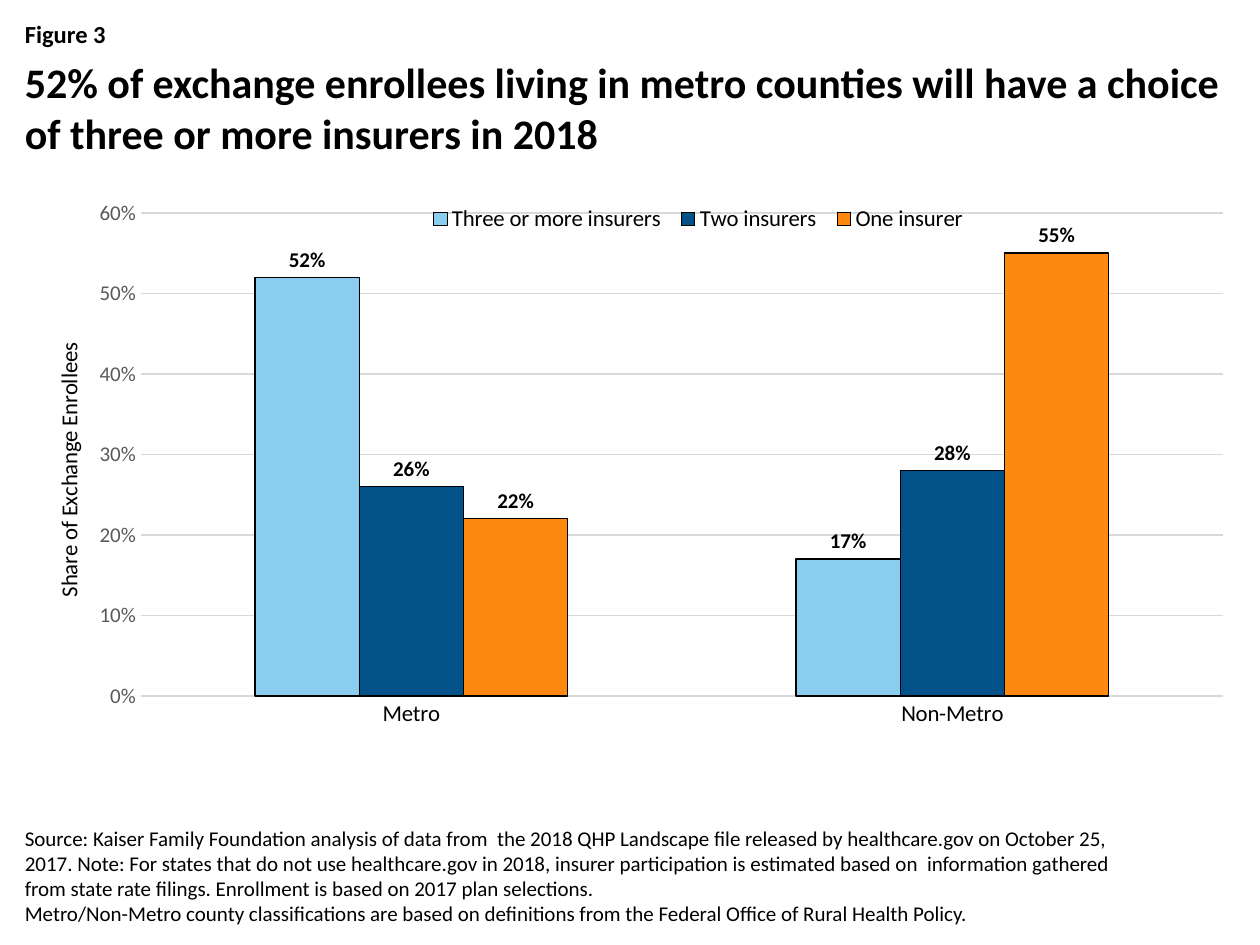
"""Build a slide with a clustered column chart of insurer choice by county type."""
from dataclasses import dataclass

from lxml import etree
from pptx import Presentation
from pptx import util as u
from pptx.chart.data import CategoryChartData
from pptx.dml.color import RGBColor
from pptx.enum import chart as ch, text
from pptx.oxml.ns import qn

FONT = "Calibri"
BLACK, GREY, GRID = "000000", "595959", "D9D9D9"


@dataclass
class Series:
    name: str
    values: tuple[float, ...]
    color: str


@dataclass
class Box:
    left: float
    top: float
    width: float
    height: float
    size: float
    lines: tuple[str, ...]
    bold: bool = False
    anchor: text.MSO_ANCHOR = text.MSO_ANCHOR.TOP

    def frame(self) -> list[u.Length]:
        return [u.Cm(v) for v in (self.left, self.top, self.width, self.height)]


CATEGORIES = ("Metro", "Non-Metro")
SERIES = (
    Series("Three or more insurers", (0.52, 0.17), "8BCDEF"),
    Series("Two insurers", (0.26, 0.28), "025189"),
    Series("One insurer", (0.22, 0.55), "FF8811"),
)
BOXES = (
    Box(0.25, 0.25, 24.9, 0.86, 14, ("Figure 3",), bold=True),
    Box(0.25, 1.02, 24.9, 2.54, 24, (
        "52% of exchange enrollees living in metro counties will have a choice "
        "of three or more insurers in 2018",), bold=True),
    Box(0.25, 17.27, 23.11, 1.52, 12, (
        "Source: Kaiser Family Foundation analysis of data from  the 2018 QHP Landscape file "
        "released by healthcare.gov on October 25, 2017. Note: For states that do not use "
        "healthcare.gov in 2018, insurer participation is estimated based on  information "
        "gathered from state rate filings. Enrollment is based on 2017 plan selections.",
        "Metro/Non-Metro county classifications are based on definitions from the Federal "
        "Office of Rural Health Policy."), anchor=text.MSO_ANCHOR.BOTTOM),
)


def rgb(color: str) -> RGBColor:
    return RGBColor.from_string(color)


def set_font(font, size: float, color: str = BLACK, bold: bool = False) -> None:
    font.name, font.size, font.bold = FONT, u.Pt(size), bold
    font.color.rgb = rgb(color)


def set_line(line, color: str) -> None:
    line.color.rgb = rgb(color)
    line.width = u.Pt(0.75)


def add_text(s, box: Box) -> None:
    tf = s.shapes.add_textbox(*box.frame()).text_frame
    tf.word_wrap = True
    tf.vertical_anchor = box.anchor
    for i, line in enumerate(box.lines):
        p = tf.paragraphs[0] if i == 0 else tf.add_paragraph()
        p.text = line
        set_font(p.font, box.size, bold=box.bold)


def place(el, after: str | None, inner: bool = False, **fractions: float) -> None:
    for old in el.findall(qn("c:layout")):
        el.remove(old)
    layout = etree.Element(qn("c:layout"))
    manual = etree.SubElement(layout, qn("c:manualLayout"))
    values = {"layoutTarget": "inner"} if inner else {}
    values |= {"xMode": "edge", "yMode": "edge"} | fractions
    for tag, value in values.items():
        etree.SubElement(manual, qn(f"c:{tag}")).set("val", str(value))
    if after:
        el.find(qn(after)).addnext(layout)
    else:
        el.insert(0, layout)


def style_axes(chart) -> None:
    cat, val = chart.category_axis, chart.value_axis
    for axis in (cat, val):
        axis.major_tick_mark = axis.minor_tick_mark = ch.XL_TICK_MARK.NONE
    set_font(cat.tick_labels.font, 13)
    set_line(cat.format.line, GRID)
    set_font(val.tick_labels.font, 12, GREY)
    val.minimum_scale, val.maximum_scale, val.major_unit = 0, 0.6, 0.1
    val.tick_labels.number_format = "0%"
    val.tick_labels.number_format_is_linked = False
    val.format.line.fill.background()
    set_line(val.major_gridlines.format.line, GRID)
    p = val.axis_title.text_frame.paragraphs[0]
    p.text = "Share of Exchange Enrollees"
    set_font(p.font, 13)


def add_columns(s) -> None:
    data = CategoryChartData(number_format="0%")
    data.categories = CATEGORIES
    for item in SERIES:
        data.add_series(item.name, item.values)
    chart = s.shapes.add_chart(ch.XL_CHART_TYPE.COLUMN_CLUSTERED, u.Cm(0.25), u.Cm(3.81),
                               u.Cm(24.9), u.Cm(12.07), data).chart
    set_font(chart.font, 10)
    chart.has_title = False
    chart.has_legend = True
    chart.legend.position = ch.XL_LEGEND_POSITION.BOTTOM
    chart.legend.include_in_layout = False
    set_font(chart.legend.font, 13)
    style_axes(chart)
    plot = chart.plots[0]
    plot.gap_width, plot.overlap, plot.vary_by_categories = 219, 0, False
    for series, item in zip(plot.series, SERIES):
        series.format.fill.solid()
        series.format.fill.fore_color.rgb = rgb(item.color)
        set_line(series.format.line, BLACK)
        labels = series.data_labels
        labels.show_value = True
        labels.number_format, labels.number_format_is_linked = "0%", False
        labels.position = ch.XL_LABEL_POSITION.OUTSIDE_END
        set_font(labels.font, 12, bold=True)
    root = chart.element
    place(root.find(f".//{qn('c:plotArea')}"), None, inner=True, x=0.104, y=0.04, w=0.876, h=0.807)
    place(root.find(f".//{qn('c:legend')}"), "c:legendPos", x=0.33, y=0.02, w=0.45, h=0.06)
    place(root.find(f".//{qn('c:valAx')}/{qn('c:title')}"), "c:tx", x=0.03, y=0.25)


def main() -> None:
    prs = Presentation()
    prs.slide_width, prs.slide_height = u.Cm(25.4), u.Cm(19.05)
    s = prs.slides.add_slide(prs.slide_layouts[6])
    add_columns(s)
    for box in BOXES:
        add_text(s, box)
    prs.save("out.pptx")


if __name__ == "__main__":
    main()
